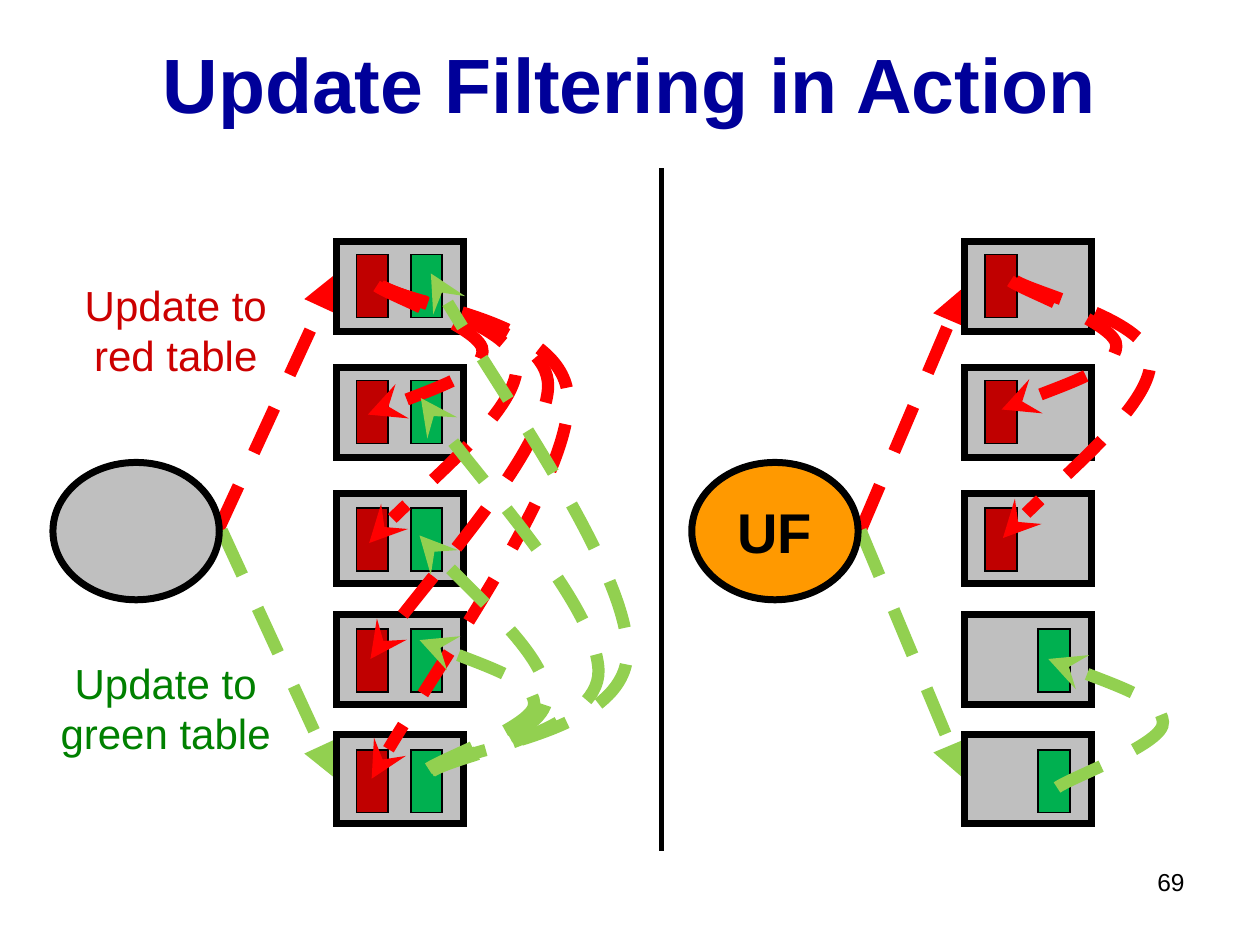
"""Build the slide comparing table updates with and without update filtering."""
from lxml import etree
from pptx import Presentation
from pptx.dml.color import RGBColor
from pptx.enum.dml import MSO_LINE
from pptx.enum.shapes import MSO_CONNECTOR, MSO_SHAPE
from pptx.enum.text import MSO_ANCHOR, PP_ALIGN
from pptx.oxml.ns import qn
from pptx.util import Inches, Pt

STRAIGHT = MSO_CONNECTOR.STRAIGHT
RECTANGLE, OVAL = MSO_SHAPE.RECTANGLE, MSO_SHAPE.OVAL
MIDDLE, TOP = MSO_ANCHOR.MIDDLE, MSO_ANCHOR.TOP
CENTER, RIGHT = PP_ALIGN.CENTER, PP_ALIGN.RIGHT
DASH = MSO_LINE.DASH
LEFT_SIDE = 1

THEME = {
    "font": "Arial",
    "title": "000099", "black": "000000",
    "red label": "CC0000", "green label": "008000",
    "red table": "C00000", "green table": "00B050",
    "red update": "FF0000", "green update": "92D050",
    "replica": "C0C0C0", "filtered replica": "BFBFBF",
    "balancer": "BFBFBF", "filter": "FF9900",
    "title size": 44, "filter size": 32, "label size": 24, "number size": 14,
}


def outline(shape, color, width, tail=None):
    """Draw a plain line, or a dashed one that ends in an arrowhead."""
    shape.line.color.rgb = RGBColor.from_string(THEME[color])
    shape.line.width = Pt(width)
    if tail:
        shape.line.dash_style = DASH
    properties = shape._element.spPr
    line = properties.find(qn("a:ln"))
    etree.SubElement(line, qn("a:miter"), lim="800000")
    if tail:
        etree.SubElement(line, qn("a:tailEnd"), type=tail)
    etree.SubElement(properties, qn("a:effectLst"))


def write(box, lines, color, size, bold=False, align=CENTER, anchor=MIDDLE, wrap=False):
    """Fill a box with one formatted paragraph per line."""
    frame = box.text_frame
    frame.word_wrap, frame.vertical_anchor = wrap, anchor
    frame.text = "\n".join(lines)
    font_values = {"name": THEME["font"], "size": Pt(THEME[size]), "bold": bold}
    for para in frame.paragraphs:
        para.alignment = align
        for span in para.runs:
            span.font.color.rgb = RGBColor.from_string(THEME[color])
            for name, value in font_values.items():
                setattr(span.font, name, value)


deck = Presentation()
deck.slide_width, deck.slide_height = Inches(10), Inches(7.5)
page = deck.slides.add_slide(deck.slide_layouts[5])
shapes = page.shapes

title = shapes.title
title_place = {"left": 0, "top": 0.07, "width": 10, "height": 1.17}
for name, value in title_place.items():
    setattr(title, name, Inches(value))
write(title, ["Update Filtering in Action"], "title", "title size", bold=True, wrap=True)

divider = shapes.add_connector(
    STRAIGHT, Inches(5.25), Inches(6.75), Inches(5.25), Inches(1.33))
outline(divider, "black", 3)

replica_tops = [1.92, 2.92, 3.92, 4.88, 5.83]
table_tops = [2.02, 3.02, 4.03, 4.99, 5.95]
systems = [
    {"oval": 0.42, "oval fill": "balancer", "text": None, "replicas": 2.67,
     "replica fill": "replica", "red": (1.73, 2.67, 2.17), "green": (1.76, 2.67, 6.19),
     "tables": [("red table", 2.83, table_tops), ("green table", 3.26, table_tops)]},
    {"oval": 5.49, "oval fill": "filter", "text": "UF", "replicas": 7.655,
     "replica fill": "filtered replica", "red": (6.83, 7.63, 2.27), "green": (6.83, 7.63, 6.19),
     "tables": [("red table", 7.82, table_tops[:3]), ("green table", 8.24, table_tops[3:])]},
]
for system in systems:
    links = {}
    for color in ("red", "green"):
        start, end, level = system[color]
        links[color] = shapes.add_connector(
            STRAIGHT, Inches(start), Inches(4.21), Inches(end), Inches(level))
        outline(links[color], color + " update", 7, "triangle")

    sender = shapes.add_shape(
        OVAL, Inches(system["oval"]), Inches(3.67), Inches(1.32), Inches(1.09))
    sender.fill.solid()
    sender.fill.fore_color.rgb = RGBColor.from_string(THEME[system["oval fill"]])
    outline(sender, "black", 4)
    if system["text"]:
        write(sender, [system["text"]], "black", "filter size", bold=True)

    pieces = [(system["replica fill"], system["replicas"], replica_tops, 1.01, 0.71, 4)]
    pieces += [(fill, left, tops, 0.25, 0.5, 1) for fill, left, tops in system["tables"]]
    boxes = []
    for fill, left, tops, width, height, line_width in pieces:
        for top in tops:
            box = shapes.add_shape(
                RECTANGLE, Inches(left), Inches(top), Inches(width), Inches(height))
            box.fill.solid()
            box.fill.fore_color.rgb = RGBColor.from_string(THEME[fill])
            outline(box, "black", line_width)
            boxes.append(box)
    links["green"].end_connect(boxes[4], LEFT_SIDE)
    if system["text"]:
        links["red"].end_connect(boxes[0], LEFT_SIDE)

labels = [
    (0.57, 2.17, 1.65, "red table", "red label"),
    (0.38, 5.17, 1.87, "green table", "green label"),
]
for left, top, width, table, color in labels:
    label = shapes.add_textbox(Inches(left), Inches(top), Inches(width), Inches(0.9))
    write(label, ["Update to", table], color, "label size", anchor=TOP)

arcs = {
    "one row": [(2.99, 2.27), (3.12, 2.36), (3.85, 2.62), (3.83, 2.79),
                (3.82, 2.96), (3.33, 3.13), (2.92, 3.29)],
    "two rows": [(3.03, 2.27), (3.21, 2.38), (4.12, 2.59), (4.1, 2.92),
                 (4.09, 3.26), (3.17, 4.02), (2.93, 4.31)],
    "two short rows": [(3.42, 2.25), (3.58, 2.35), (4.36, 2.54), (4.34, 2.85),
                       (4.33, 3.16), (3.54, 3.86), (3.33, 4.12)],
    "three rows": [(3.03, 2.27), (3.25, 2.41), (4.36, 2.58), (4.35, 3.07),
                   (4.33, 3.57), (3.23, 4.78), (2.94, 5.23)],
    "four rows": [(3.02, 2.27), (3.27, 2.43), (4.52, 2.54), (4.51, 3.19),
                  (4.5, 3.84), (3.28, 5.56), (2.95, 6.18)],
}
updates = [
    ("one row", "red update", 0, 0, 1),
    ("two rows", "red update", 0, 0, 1),
    ("four rows", "red update", 0, 0, 1),
    ("three rows", "red update", 0, 0, 1),
    ("one row", "red update", 5.03, -0.04, 1),
    ("two rows", "red update", 5.03, -0.04, 1),
    ("one row", "green update", 5.4, 8.52, -1),
    ("one row", "green update", 0.41, 8.37, -1),
    ("two short rows", "green update", 0, 8.37, -1),
    ("four rows", "green update", 0.47, 8.35, -1),
    ("three rows", "green update", 0.4, 8.39, -1),
]
for arc, color, shift_x, shift_y, direction in updates:
    points = [(Inches(x + shift_x), Inches(shift_y + direction * y)) for x, y in arcs[arc]]
    builder = shapes.build_freeform(*points[0])
    builder.add_line_segments(points[1:], close=False)
    update = builder.convert_to_shape()
    update.fill.background()
    outline(update, color, 7, "stealth")
    segments = list(update._element.iter(qn("a:lnTo")))
    for first in range(0, len(segments), 3):
        curve = etree.Element(qn("a:cubicBezTo"))
        segments[first].addprevious(curve)
        for segment in segments[first:first + 3]:
            curve.append(segment[0])
            segment.getparent().remove(segment)

number = shapes.add_textbox(Inches(7.17), Inches(6.83), Inches(2.33), Inches(0.52))
write(number, ["69"], "black", "number size", align=RIGHT, anchor=TOP, wrap=True)

deck.save("out.pptx")
